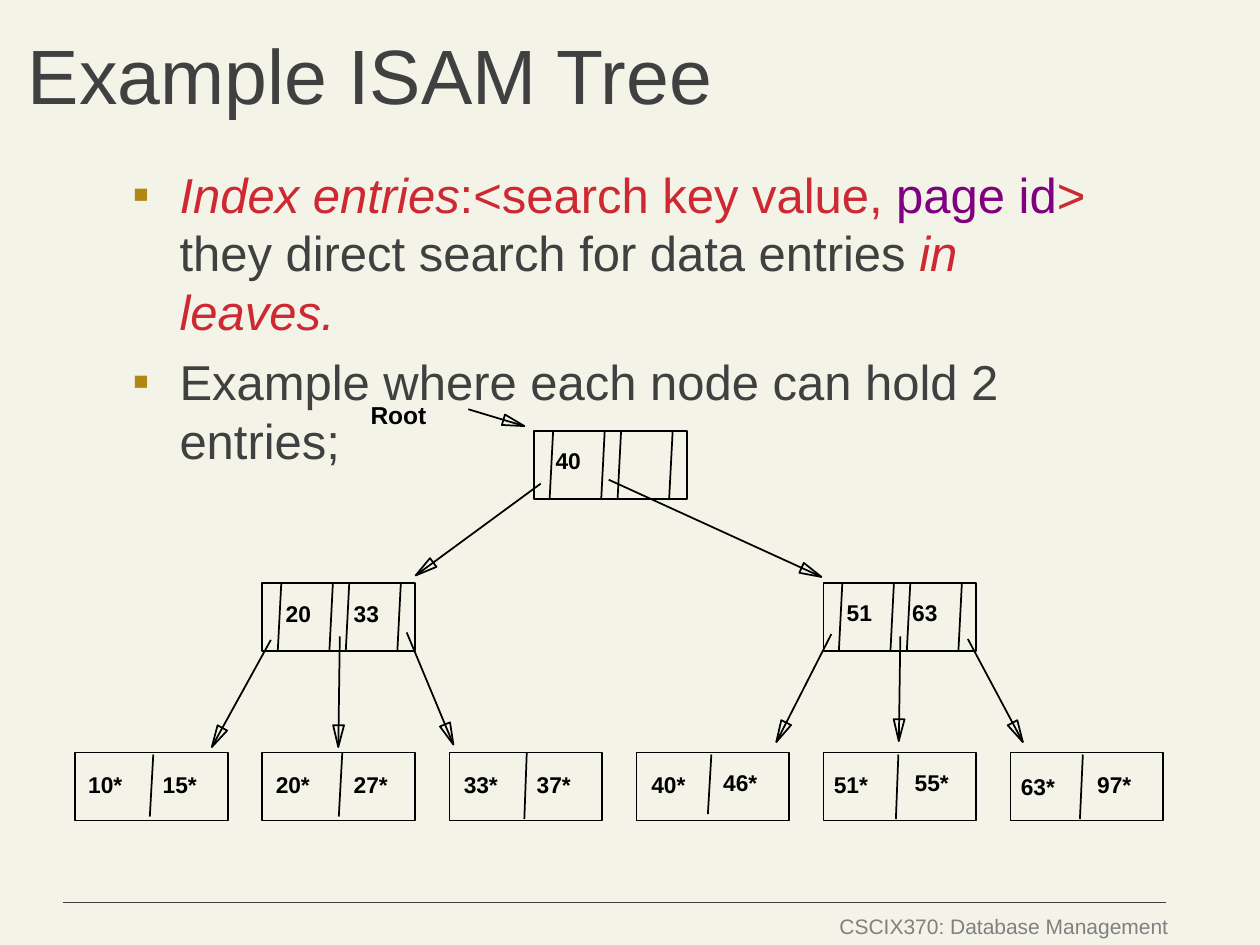
import math

import lxml.etree
import pptx
import pptx.dml.color
import pptx.enum.shapes
import pptx.enum.text
import pptx.oxml.ns
import pptx.util

Cm = pptx.util.Cm
Pt = pptx.util.Pt
qn = pptx.oxml.ns.qn

COLOURS = {
    "background": "F3F3E7",
    "text": "404040",
    "emphasis": "CE2933",
    "page": "800080",
    "bullet": "B18714",
    "footer": "808080",
    "ink": "000000",
}


def rgb(name):
    return pptx.dml.color.RGBColor.from_string(COLOURS[name])


class TreeSlide:
    """Style and current slide; all positions are in centimetres."""

    font = "Arial"
    inset = 0.13
    node_width, node_height = 3.08, 1.37
    head_length, head_half_width = 0.44, 0.11

    def __init__(self, deck):
        self.slide = deck.slides.add_slide(deck.slide_layouts[6])
        self.shapes = self.slide.shapes
        fill = self.slide.background.fill
        fill.solid()
        fill.fore_color.rgb = rgb("background")

    def style_run(self, run, size, colour, bold=False, italic=False):
        run.font.name = self.font
        run.font.size = Pt(size)
        run.font.color.rgb = rgb(colour)
        run.font.bold = bold
        run.font.italic = italic

    def frame(self, x, y, width, height, wrap):
        frame = self.shapes.add_textbox(Cm(x), Cm(y), Cm(width), Cm(height)).text_frame
        frame.word_wrap = wrap
        frame.margin_left = frame.margin_right = Cm(self.inset)
        frame.margin_top = frame.margin_bottom = Cm(self.inset)
        return frame

    def label(self, text, x, y, width, height=0.76, size=13, colour="ink",
              bold=True, align=pptx.enum.text.PP_ALIGN.LEFT):
        frame = self.frame(x, y, width, height, wrap=False)
        frame.text = text
        paragraph = frame.paragraphs[0]
        paragraph.alignment = align
        self.style_run(paragraph.runs[0], size, colour, bold)

    def bullets(self, items, x, y, width, height, size):
        frame = self.frame(x, y, width, height, wrap=True)
        for index, pieces in enumerate(items):
            paragraph = frame.paragraphs[0] if index == 0 else frame.add_paragraph()
            if index:
                paragraph.space_before = Pt(6)
            properties = paragraph._p.get_or_add_pPr()
            properties.set("marL", str(Cm(0.95)))
            properties.set("indent", str(-Cm(0.95)))
            colour = lxml.etree.SubElement(properties, qn("a:buClr"))
            lxml.etree.SubElement(colour, qn("a:srgbClr"), val=COLOURS["bullet"])
            lxml.etree.SubElement(properties, qn("a:buFont"), typeface=self.font)
            lxml.etree.SubElement(properties, qn("a:buChar"), char="▪")
            for text, colour_name, italic in pieces:
                run = paragraph.add_run()
                run.text = text
                self.style_run(run, size, colour_name, italic=italic)

    def outline(self, shape):
        shape.shadow.inherit = False
        shape.fill.background()
        shape.line.color.rgb = rgb("ink")
        shape.line.width = Pt(1)

    def line(self, start, end, colour="ink", weight=1):
        connector = self.shapes.add_connector(
            pptx.enum.shapes.MSO_CONNECTOR.STRAIGHT, *map(Cm, (*start, *end)))
        connector.line.color.rgb = rgb(colour)
        connector.line.width = Pt(weight)
        lxml.etree.SubElement(connector._element.spPr, qn("a:effectLst"))

    def arrow(self, start, end):
        """Line with a hollow, narrow triangular head."""
        self.line(start, end)
        (x, y), length = end, math.dist(start, end)
        along_x, along_y = (x - start[0]) / length, (y - start[1]) / length
        base_x = x - self.head_length * along_x
        base_y = y - self.head_length * along_y
        side_x, side_y = -self.head_half_width * along_y, self.head_half_width * along_x
        builder = self.shapes.build_freeform(
            Cm(base_x + side_x), Cm(base_y + side_y))
        builder.add_line_segments(
            [(Cm(x), Cm(y)), (Cm(base_x - side_x), Cm(base_y - side_y))], close=True)
        self.outline(builder.convert_to_shape())

    def node(self, x, y):
        box = self.shapes.add_shape(
            pptx.enum.shapes.MSO_SHAPE.RECTANGLE,
            Cm(x), Cm(y), Cm(self.node_width), Cm(self.node_height))
        self.outline(box)

    def index_node(self, x, y, keys):
        self.node(x, y)
        for offset in (0.38, 1.42, 1.75, 2.79):
            self.line((x + offset, y), (x + offset - 0.07, y + self.node_height))
        for key, key_x, key_y in keys:
            self.label(key, key_x, key_y, 0.81)

    def leaf(self, x, y, divider, entries):
        self.node(x, y)
        self.line(*divider)
        for entry, entry_x, entry_y in entries:
            self.label(entry, entry_x, entry_y, 0.99)


LEAF_LEFT, LEAF_PITCH, LEAF_TOP = 1.52, 3.77, 15.17
INDEX_TOP = 11.76

BULLETS = [
    [("Index entries", "emphasis", True),
     (":<search key value, ", "emphasis", False),
     ("page id", "page", False),
     (">", "emphasis", False),
     (" they direct search for data entries ", "text", False),
     ("in leaves.", "emphasis", True)],
    [("Example where each node can hold 2 entries;", "text", False)],
]

# Divider ends, then entries with their positions
LEAVES = [
    (((3.09, 15.21), (3.02, 16.46)), [("10*", 1.65, 15.41), ("15*", 3.15, 15.41)]),
    (((6.9, 15.17), (6.83, 16.46)), [("20*", 5.43, 15.41), ("27*", 7, 15.41)]),
    (((10.62, 15.17), (10.57, 16.51)), [("33*", 9.22, 15.41), ("37*", 10.69, 15.41)]),
    (((14.34, 15.21), (14.27, 16.41)), [("40*", 13, 15.41), ("46*", 14.45, 15.37)]),
    (((18.11, 15.21), (18.06, 16.51)), [("51*", 16.68, 15.41), ("55*", 18.31, 15.37)]),
    (((21.83, 15.21), (21.77, 16.51)), [("63*", 20.45, 15.44), ("97*", 21.99, 15.41)]),
]

INDEX_NODES = [
    (LEAF_LEFT + LEAF_PITCH, INDEX_TOP, [("20", 5.63, 11.96), ("33", 7, 11.96)]),
    (LEAF_LEFT + 4 * LEAF_PITCH, INDEX_TOP, [("51", 16.94, 11.94), ("63", 18.26, 11.94)]),
    (10.77, 8.69, [("40", 11.07, 8.87)]),
]

POINTERS = [
    ((10.9, 9.75), (8.38, 11.6)),
    ((12.27, 9.67), (16.56, 11.63)),
    ((5.46, 12.9), (4.27, 15.06)),
    ((6.85, 12.83), (6.82, 15.06)),
    ((8.2, 12.75), (9.14, 15.01)),
    ((16.76, 12.78), (15.65, 14.96)),
    ((18.15, 12.83), (18.12, 14.94)),
    ((19.51, 12.88), (20.62, 14.96)),
    ((9.44, 8.25), (10.57, 8.59)),
]


def main():
    deck = pptx.Presentation()
    deck.slide_width, deck.slide_height = Cm(25.4), Cm(19.05)
    tree = TreeSlide(deck)

    # Footer
    tree.line((23.5, 18.2), (1.26, 18.2), "text", 0.75)
    tree.label("CSCIX370: Database Management", 16.76, 18.29, 6.93, 0.74, 12,
               "footer", False, pptx.enum.text.PP_ALIGN.RIGHT)

    # Title and explanation
    tree.label("Example ISAM Tree", 0.43, 0.43, 24.56, 2.97, 44, "text", False)
    tree.bullets(BULLETS, 2.54, 3.18, 19.89, 12.57, 28)

    # Tree nodes
    for position, (divider, entries) in enumerate(LEAVES):
        tree.leaf(LEAF_LEFT + position * LEAF_PITCH, LEAF_TOP, divider, entries)
    for x, y, keys in INDEX_NODES:
        tree.index_node(x, y, keys)

    # Pointers and root label
    for start, end in POINTERS:
        tree.arrow(start, end)
    tree.label("Root", 7.34, 7.94, 1.42, 0.81, 14)

    deck.save("out.pptx")


if __name__ == "__main__":
    main()
